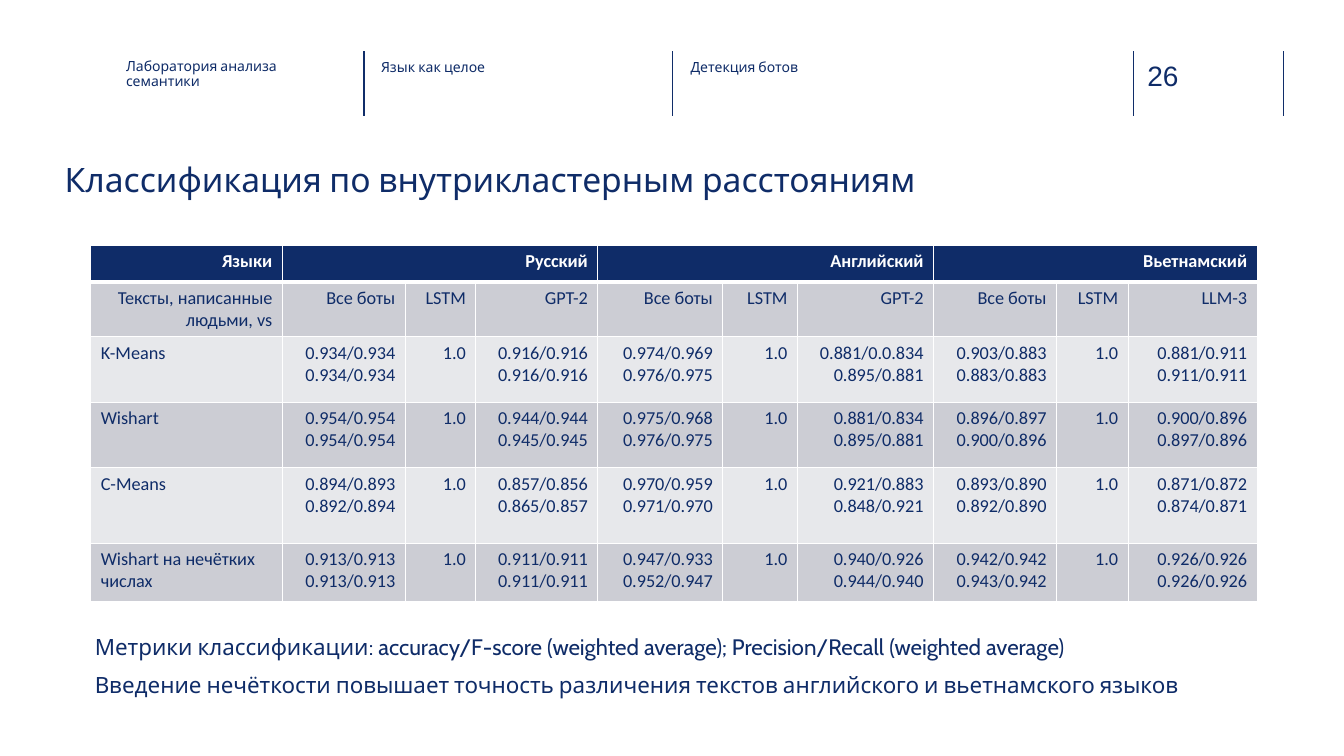
from dataclasses import dataclass

import pptx
import pptx.dml.color
import pptx.enum.shapes
import pptx.enum.text
import pptx.oxml
import pptx.oxml.ns
import pptx.slide
import pptx.table
import pptx.text.text
import pptx.util

Inches = pptx.util.Inches
Pt = pptx.util.Pt
RIGHT = pptx.enum.text.PP_ALIGN.RIGHT


@dataclass(frozen=True)
class Theme:
    navy: str = "0F2C68"
    rule: str = "102D69"
    white: str = "FFFFFF"
    dark_band: str = "CCCDD4"
    light_band: str = "E7E8EB"
    heading_font: str = "Cabin"
    table_font: str = "Calibri"
    number_font: str = "Arial"
    title_size: float = 24
    number_size: float = 20
    body_size: float = 16
    table_size: float = 13
    label_size: float = 10
    thin: float = 1
    thick: float = 3


@dataclass(frozen=True)
class Caption:
    text: str
    left: float
    top: float
    width: float
    height: float
    size: float
    font: str = Theme.heading_font
    line_spacing: float = 1.0


@dataclass(frozen=True)
class Method:
    name: str
    height: float
    scores: tuple[str, ...]


THEME = Theme()
RULE_TOP, RULE_BOTTOM = 0.51, 1.15
RULE_POSITIONS = (3.61, 6.67, 11.24, 12.73)

CAPTIONS = (
    Caption("26", 11.38, 0.58, 0.73, 0.34, THEME.number_size, THEME.number_font),
    Caption("Классификация по внутрикластерным расстояниям",
            0.64, 1.58, 12.09, 0.85, THEME.title_size),
    Caption("Метрики классификации: accuracy/F-score (weighted average); "
            "Precision/Recall (weighted average)\n"
            "Введение нечёткости повышает точность различения текстов "
            "английского и вьетнамского языков",
            0.94, 6.31, 12.39, 0.85, THEME.body_size, line_spacing=0.9),
    Caption("Лаборатория анализа семантики",
            1.25, 0.59, 2.08, 0.45, THEME.label_size, line_spacing=0.9),
    Caption("Язык как целое", 3.78, 0.6, 2.26, 0.45, THEME.label_size, line_spacing=0.9),
    Caption("Детекция ботов", 6.85, 0.6, 2.26, 0.45, THEME.label_size, line_spacing=0.9),
)

COLUMN_WIDTHS = (1.9, 1.22, 0.7, 1.21, 1.24, 0.74, 1.35, 1.22, 0.71, 1.28)
LANGUAGES = {"Русский": "GPT-2", "Английский": "GPT-2", "Вьетнамский": "LLM-3"}
HEADER_HEIGHTS = (0.37, 0.52)
LSTM_SCORE = "1.0"
METHODS = (
    Method("K-Means", 0.65, (
        "0.934/0.934\n0.934/0.934", "0.916/0.916\n0.916/0.916",
        "0.974/0.969\n0.976/0.975", "0.881/0.0.834\n0.895/0.881",
        "0.903/0.883\n0.883/0.883", "0.881/0.911\n0.911/0.911")),
    Method("Wishart", 0.65, (
        "0.954/0.954\n0.954/0.954", "0.944/0.944\n0.945/0.945",
        "0.975/0.968\n0.976/0.975", "0.881/0.834\n0.895/0.881",
        "0.896/0.897\n0.900/0.896", "0.900/0.896\n0.897/0.896")),
    Method("C-Means", 0.75, (
        "0.894/0.893\n0.892/0.894", "0.857/0.856\n0.865/0.857",
        "0.970/0.959\n0.971/0.970", "0.921/0.883\n0.848/0.921",
        "0.893/0.890\n0.892/0.890", "0.871/0.872\n0.874/0.871")),
    Method("Wishart на нечётких числах", 0.58, (
        "0.913/0.913\n0.913/0.913", "0.911/0.911\n0.911/0.911",
        "0.947/0.933\n0.952/0.947", "0.940/0.926\n0.944/0.940",
        "0.942/0.942\n0.943/0.942", "0.926/0.926\n0.926/0.926")),
)


def rgb(color: str) -> pptx.dml.color.RGBColor:
    return pptx.dml.color.RGBColor.from_string(color)


def format_runs(paragraph: pptx.text.text._Paragraph, font: str, size: float,
                color: str, bold: bool = False) -> None:
    for run in paragraph.runs:
        run.font.name = font
        run.font.size = Pt(size)
        run.font.bold = bold
        run.font.color.rgb = rgb(color)


def draw_rule(slide: pptx.slide.Slide, x: float) -> None:
    rule = slide.shapes.add_connector(
        pptx.enum.shapes.MSO_CONNECTOR.STRAIGHT,
        Inches(x), Inches(RULE_TOP), Inches(x), Inches(RULE_BOTTOM))
    rule.line.color.rgb = rgb(THEME.rule)
    rule.line.width = Pt(THEME.thin)
    rule._element.spPr.append(
        rule._element.spPr.makeelement(pptx.oxml.ns.qn("a:effectLst"), {}))


def draw_caption(slide: pptx.slide.Slide, caption: Caption) -> None:
    frame = slide.shapes.add_textbox(
        Inches(caption.left), Inches(caption.top),
        Inches(caption.width), Inches(caption.height)).text_frame
    frame.word_wrap = True
    frame.margin_left = frame.margin_right = 0
    frame.margin_top = frame.margin_bottom = 0
    frame.text = caption.text
    for index, paragraph in enumerate(frame.paragraphs):
        paragraph.line_spacing = caption.line_spacing
        paragraph.space_before = Pt(10 if index else 0)
        format_runs(paragraph, caption.font, caption.size, THEME.navy)


def set_borders(cell: pptx.table._Cell, row: int) -> None:
    widths = {"L": THEME.thin, "R": THEME.thin,
              "T": THEME.thick if row == 1 else THEME.thin,
              "B": THEME.thick if row == 0 else THEME.thin}
    properties = cell._tc.get_or_add_tcPr()
    namespace = pptx.oxml.ns.nsdecls("a")
    for side, width in widths.items():
        properties.append(pptx.oxml.parse_xml(
            f'<a:ln{side} {namespace} w="{Pt(width)}"><a:solidFill>'
            f'<a:srgbClr val="{THEME.white}"/></a:solidFill></a:ln{side}>'))


def fill_cell(cell: pptx.table._Cell, text: str, row: int, column: int) -> None:
    is_header = row == 0
    band = THEME.dark_band if row % 2 else THEME.light_band
    set_borders(cell, row)
    cell.fill.solid()
    cell.fill.fore_color.rgb = rgb(THEME.navy if is_header else band)
    cell.text_frame.text = text
    for paragraph in cell.text_frame.paragraphs:
        if row < 2 or column > 0:
            paragraph.alignment = RIGHT
        format_runs(paragraph, THEME.table_font, THEME.table_size,
                    THEME.white if is_header else THEME.navy, is_header)


def score_rows() -> list[list[str]]:
    languages, bots = ["Языки"], ["Тексты, написанные людьми, vs"]
    for language, model in LANGUAGES.items():
        languages += [language, "", ""]
        bots += ["Все боты", "LSTM", model]
    rows = [languages, bots]
    for method in METHODS:
        row = [method.name]
        for all_bots, gpt in zip(method.scores[::2], method.scores[1::2]):
            row += [all_bots, LSTM_SCORE, gpt]
        rows.append(row)
    return rows


def draw_scores(slide: pptx.slide.Slide) -> None:
    rows = score_rows()
    heights = HEADER_HEIGHTS + tuple(method.height for method in METHODS)
    scores = slide.shapes.add_table(
        len(rows), len(COLUMN_WIDTHS), Inches(0.9), Inches(2.43),
        Inches(sum(COLUMN_WIDTHS)), Inches(sum(heights))).table
    for column, width in zip(scores.columns, COLUMN_WIDTHS):
        column.width = Inches(width)
    for table_row, height in zip(scores.rows, heights):
        table_row.height = Inches(height)
    for row, texts in enumerate(rows):
        for column, text in enumerate(texts):
            fill_cell(scores.cell(row, column), text, row, column)
    for first in range(1, len(COLUMN_WIDTHS), 3):
        scores.cell(0, first).merge(scores.cell(0, first + 2))


def main() -> None:
    presentation = pptx.Presentation()
    presentation.slide_width = Inches(13.33)
    presentation.slide_height = Inches(7.5)
    slide = presentation.slides.add_slide(presentation.slide_layouts[6])
    for x in RULE_POSITIONS:
        draw_rule(slide, x)
    draw_scores(slide)
    for caption in CAPTIONS:
        draw_caption(slide, caption)
    presentation.save("out.pptx")


if __name__ == "__main__":
    main()
